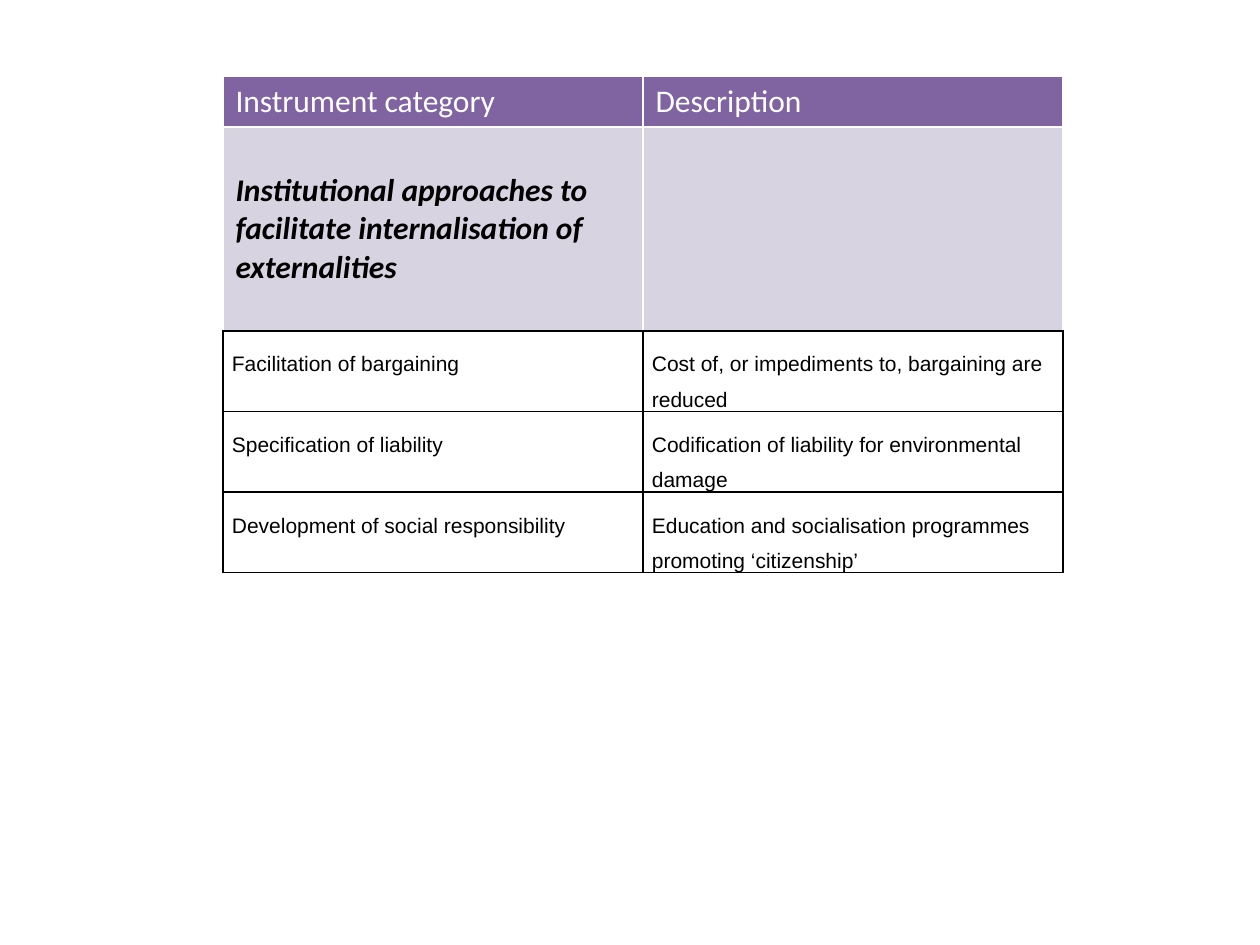
from lxml import etree
from pptx import Presentation
from pptx import util as u
from pptx.dml.color import RGBColor
from pptx.enum import text
from pptx.oxml import ns

PX = 914400 / 126
PURPLE = RGBColor(0x80, 0x64, 0xA2)
LILAC = RGBColor(0xD8, 0xD3, 0xE0)
WHITE = RGBColor(0xFF, 0xFF, 0xFF)
BLACK = RGBColor(0, 0, 0)


def px(length):
    return u.Emu(round(length * PX))


def add_border(cell, side, color):
    properties = cell._tc.get_or_add_tcPr()
    line = etree.SubElement(properties, ns.qn(f"a:ln{side}"), w=str(u.Pt(1)))
    fill = etree.SubElement(line, ns.qn("a:solidFill"))
    etree.SubElement(fill, ns.qn("a:srgbClr"), val=str(color))


prs = Presentation()
prs.slide_width, prs.slide_height = px(1260), px(945)
slide = prs.slides.add_slide(prs.slide_layouts[6])

ROWS = [
    ("Instrument category", "Description"),
    ("Institutional approaches to facilitate internalisation of externalities", ""),
    ("Facilitation of bargaining", "Cost of, or impediments to, bargaining are reduced"),
    ("Specification of liability", "Codification of liability for environmental damage"),
    ("Development of social responsibility",
     "Education and socialisation programmes promoting ‘citizenship’"),
]
HEIGHTS = [51, 204, 70, 70, 70]

# Instrument table
instruments = slide.shapes.add_table(
    len(ROWS), 2, px(223), px(76), px(840), px(sum(HEIGHTS))).table
instruments.first_row = instruments.horz_banding = False

for row, (wording, height) in enumerate(zip(ROWS, HEIGHTS)):
    instruments.rows[row].height = px(height)
    header, section = row == 0, row == 1
    for column, words in enumerate(wording):
        cell = instruments.cell(row, column)
        cell.text = words
        entry = cell.text_frame.paragraphs[0]

        # Borders come before the fill in the cell properties
        for side in "LRTB":
            black = row > 1 or (section and side == "B")
            add_border(cell, side, BLACK if black else WHITE)

        # Heading rows are filled, instrument rows are plain
        if header or section:
            cell.fill.solid()
            cell.fill.fore_color.rgb = PURPLE if header else LILAC
            cell.vertical_anchor = text.MSO_ANCHOR.MIDDLE if section else text.MSO_ANCHOR.TOP
        else:
            cell.fill.background()
            cell.margin_left = cell.margin_right = px(9)
            cell.margin_top, cell.margin_bottom = px(10), 0
            entry.line_spacing = 1.5
            entry.space_after = u.Pt(6)

        entry.font.name = "Calibri" if header or section else "Arial"
        entry.font.size = u.Pt(18 if header or section else 12)
        entry.font.bold = entry.font.italic = section
        entry.font.color.rgb = WHITE if header else BLACK

prs.save("out.pptx")
